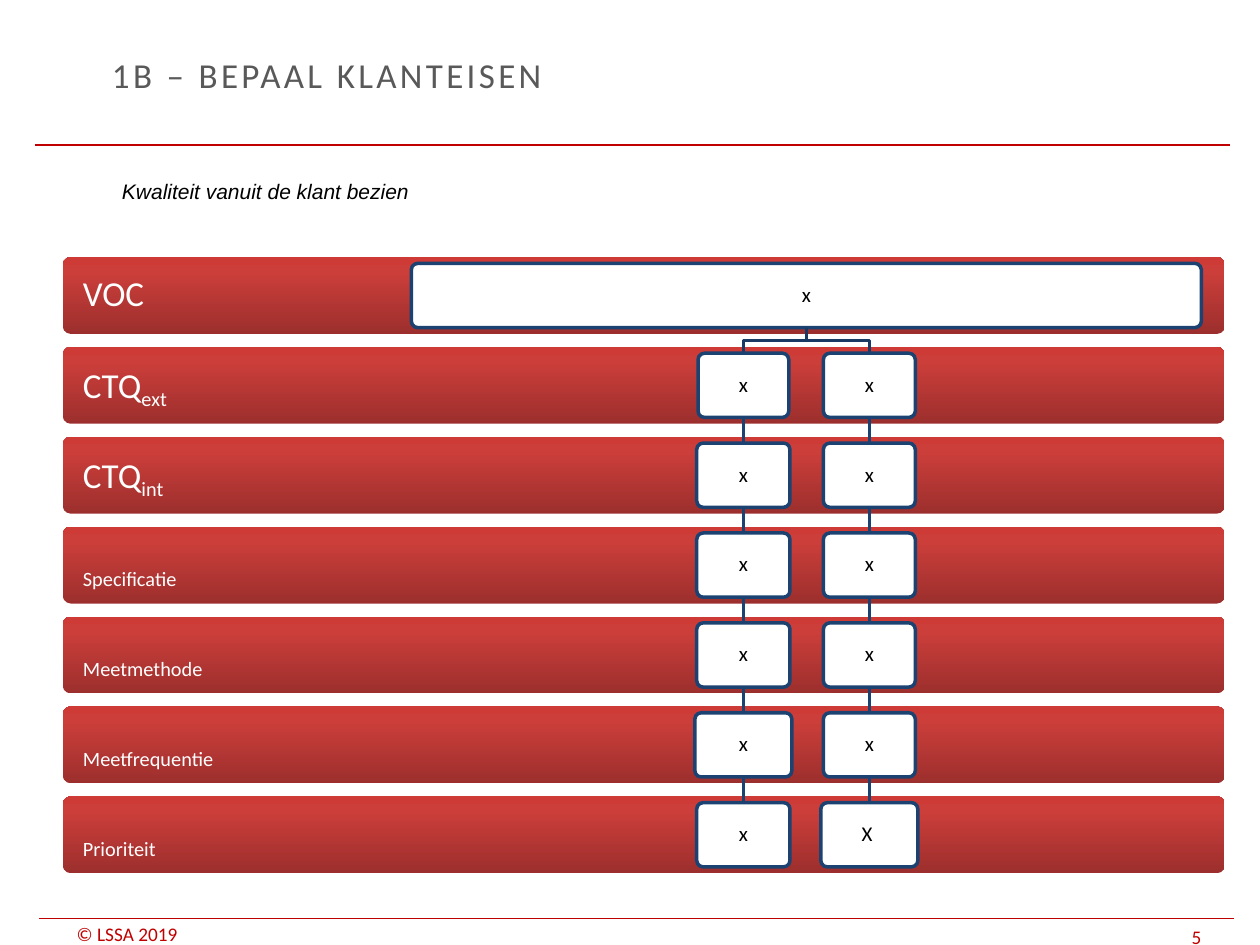
from copy import deepcopy
from dataclasses import dataclass

from lxml.etree import SubElement
from pptx import Presentation
from pptx.dml.color import RGBColor
from pptx.enum.shapes import MSO_CONNECTOR as Connector, MSO_SHAPE as Preset
from pptx.enum.text import MSO_ANCHOR as Anchor, PP_ALIGN as Align
from pptx.oxml.ns import qn
from pptx.util import Inches, Pt


@dataclass(frozen=True)
class Theme:
    font: str = "Calibri"
    body_font: str = "Arial"
    rule: str = "C00000"
    title: str = "595959"
    text: str = "000000"
    white: str = "FFFFFF"
    node_line: str = "1C4271"
    branch_line: str = "193A64"
    bar_stops: tuple = ((0, "9C2F2D"), (0.8, "CB3E3A"), (1, "CE3B37"))
    title_size: int = 20
    label_size: int = 20
    body_size: int = 12
    footer_size: int = 11
    rule_width: float = 0.75
    node_width: float = 2


THEME = Theme()
BAR_HEIGHT = 0.61
NODE_HEIGHT = 0.51
ROWS = [
    ("VOC", ""),
    ("CTQ", "ext"),
    ("CTQ", "int"),
    ("", "Specificatie"),
    ("", "Meetmethode"),
    ("", "Meetfrequentie"),
    ("", "Prioriteit"),
]
COLUMNS = [
    (5.9, [0.72, 0.74, 0.74, 0.74, 0.77, 0.74], "xxxxxx"),
    (6.9, [0.73, 0.73, 0.73, 0.73, 0.73, 0.77], ["x"] * 5 + ["X "]),
]


def color(value):
    return RGBColor.from_string(value)


def style_run(run, size, value, font=THEME.font):
    run.font.name = font
    run.font.size = Pt(size)
    run.font.color.rgb = color(value)


def set_margins(text_frame, horizontal, vertical):
    text_frame.margin_left = text_frame.margin_right = Inches(horizontal)
    text_frame.margin_top = text_frame.margin_bottom = Inches(vertical)


def add_text(slide, box, text, size, value, font=THEME.font, anchor=Anchor.TOP):
    shape = slide.shapes.add_textbox(*map(Inches, box))
    text_frame = shape.text_frame
    text_frame.word_wrap = True
    text_frame.vertical_anchor = anchor
    text_frame.text = text
    style_run(text_frame.paragraphs[0].runs[0], size, value, font)
    return shape


def add_line(slide, start, end, value, width):
    line = slide.shapes.add_connector(Connector.STRAIGHT, *map(Inches, start + end))
    line.line.color.rgb = color(value)
    line.line.width = Pt(width)
    SubElement(line._element.spPr, qn("a:effectLst"))


def add_rounded(slide, box):
    shape = slide.shapes.add_shape(Preset.ROUNDED_RECTANGLE, *map(Inches, box))
    shape.adjustments[0] = 0.1
    shape.shadow.inherit = False
    shape.text_frame.word_wrap = True
    shape.text_frame.vertical_anchor = Anchor.MIDDLE
    return shape


def add_header(slide, box):
    left, top, width, height = box
    title = add_text(slide, (left + 0.51, top + 0.26, 7.09, 0.66), "1B – BEPAAL KLANTEISEN",
                     THEME.title_size, THEME.title, anchor=Anchor.MIDDLE)
    run = title.text_frame.paragraphs[0].runs[0]
    run._r.get_or_add_rPr().set("spc", "190")
    add_line(slide, (left, top + height), (left + width, top + height),
             THEME.rule, THEME.rule_width)


def add_subtitle(slide, box):
    shape = add_text(slide, box, "Kwaliteit vanuit de klant bezien",
                     THEME.body_size, THEME.text, THEME.body_font)
    shape.text_frame.paragraphs[0].runs[0].font.italic = True


def add_footer(slide, box):
    left, top, width, height = box
    add_line(slide, (left, top), (left + width, top), THEME.rule, THEME.rule_width)
    parts = [
        ((left + 0.2, top + 0.03, 1.42, 0.18), "© LSSA 2019"),
        ((left + 9.05, top + 0.02, 0.64, 0.22), "5"),
    ]
    for part_box, text in parts:
        shape = add_text(slide, part_box, text, THEME.footer_size, THEME.rule,
                         anchor=Anchor.BOTTOM)
        set_margins(shape.text_frame, 0.1, 0)


def add_bar(slide, box, label, subscript):
    bar = add_rounded(slide, box)
    bar.line.fill.background()
    bar.fill.gradient()
    bar.fill.gradient_angle = 90
    stop_list = bar._element.spPr.find(".//" + qn("a:gsLst"))
    stop_list.append(deepcopy(stop_list[0]))
    for stop, (position, value) in zip(bar.fill.gradient_stops, THEME.bar_stops):
        stop.position = position
        stop.color.rgb = color(value)
    set_margins(bar.text_frame, 0.14, 0)
    paragraph = bar.text_frame.paragraphs[0]
    paragraph.alignment = Align.LEFT
    paragraph.line_spacing = 0.9
    for text, baseline in ((label, 0), (subscript, -25000)):
        if text:
            run = paragraph.add_run()
            run.text = text
            style_run(run, THEME.label_size, THEME.white)
            if baseline:
                run._r.get_or_add_rPr().set("baseline", str(baseline))


def add_node(slide, center, top, width, text):
    node = add_rounded(slide, (center - width / 2, top, width, NODE_HEIGHT))
    node.fill.solid()
    node.fill.fore_color.rgb = color(THEME.white)
    node.line.color.rgb = color(THEME.node_line)
    node.line.width = Pt(THEME.node_width)
    set_margins(node.text_frame, 0.05, 0.05)
    node.text_frame.text = text
    paragraph = node.text_frame.paragraphs[0]
    paragraph.alignment = Align.CENTER
    paragraph.line_spacing = 0.9
    style_run(paragraph.runs[0], THEME.body_size, THEME.text)


def add_branch(slide, start, end):
    middle = (start[1] + end[1]) / 2
    points = [(start[0], middle), (end[0], middle), end]
    builder = slide.shapes.build_freeform(Inches(start[0]), Inches(start[1]))
    builder.add_line_segments([(Inches(x), Inches(y)) for x, y in points], close=False)
    branch = builder.convert_to_shape()
    branch.shadow.inherit = False
    branch.fill.background()
    branch.line.color.rgb = color(THEME.branch_line)
    branch.line.width = Pt(THEME.node_width)


def add_tree(slide, box):
    left, top, width, height = box
    pitch = (height - BAR_HEIGHT) / (len(ROWS) - 1)
    for index, (label, subscript) in enumerate(ROWS):
        add_bar(slide, (left, top + index * pitch, width, BAR_HEIGHT), label, subscript)

    node_tops = [top + 0.05 + index * pitch for index in range(len(ROWS))]
    root_center = left + 5.9
    add_node(slide, root_center, node_tops[0], 6.27, "x")
    for center, widths, texts in COLUMNS:
        add_branch(slide, (root_center, node_tops[0] + NODE_HEIGHT), (center, node_tops[1]))
        for node_top, node_width, text in zip(node_tops[1:], widths, texts):
            add_node(slide, center, node_top, node_width, text)
        for upper, lower in zip(node_tops[1:], node_tops[2:]):
            add_line(slide, (center, upper + NODE_HEIGHT), (center, lower),
                     THEME.node_line, THEME.node_width)


def main():
    presentation = Presentation()
    presentation.slide_width = Inches(10)
    presentation.slide_height = Inches(7.5)
    slide = presentation.slides.add_slide(presentation.slide_layouts[6])
    add_footer(slide, (0.31, 7.29, 9.48, 0.21))
    add_header(slide, (0.28, 0, 9.48, 1.15))
    add_subtitle(slide, (0.87, 1.37, 2.83, 0.3))
    add_tree(slide, (0.5, 2.04, 9.22, 4.89))
    presentation.save("out.pptx")


if __name__ == "__main__":
    main()
